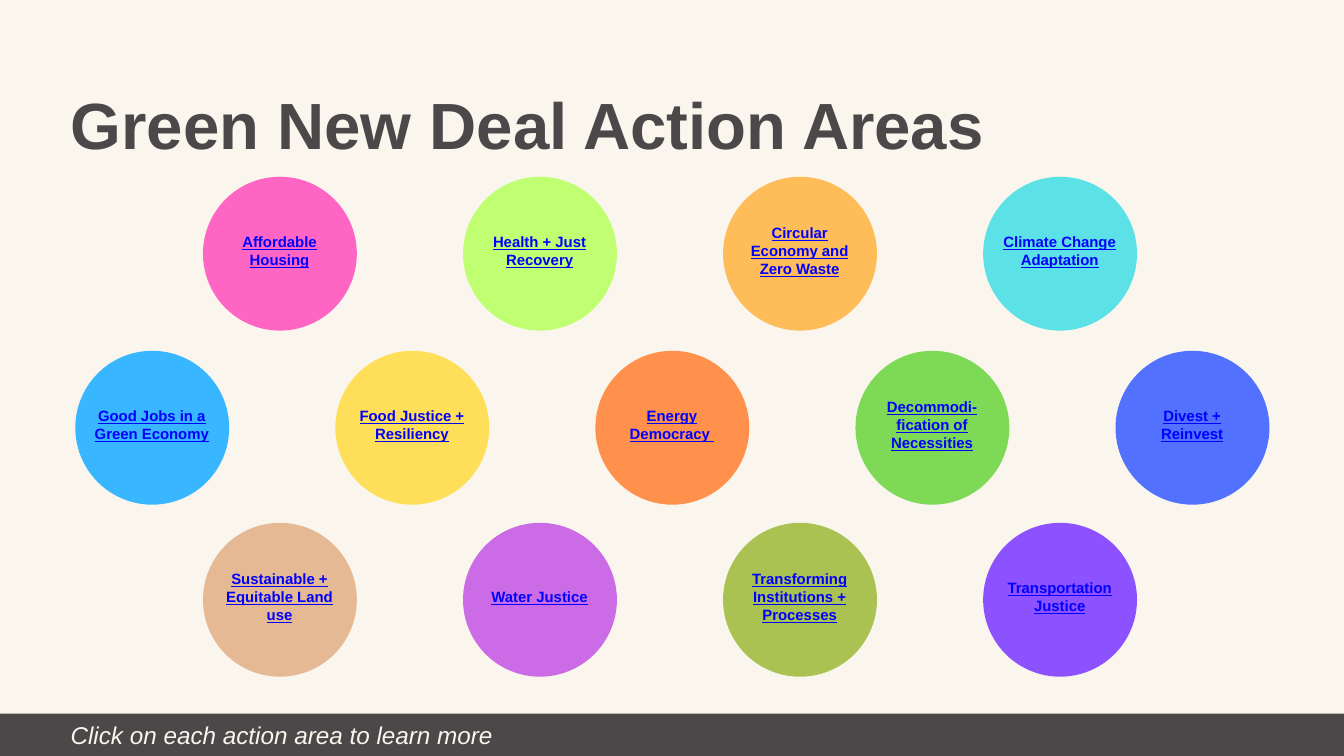
from pptx import Presentation
from pptx.dml.color import RGBColor
from pptx.enum.shapes import MSO_SHAPE as Shape
from pptx.enum.text import MSO_ANCHOR as Anchor, MSO_AUTO_SIZE as AutoSize, PP_ALIGN as Align
from pptx.util import Emu, Pt

PX = 9144
CREAM, CHARCOAL, LINK = "FAF6EE", "4A4849", "0000FF"
CIRCLE, STEP = 229, 387
ROWS = [
    (302, 263, [
        ("Affordable Housing", "FF66C4"),
        ("Health + Just Recovery", "C1FF72"),
        ("Circular Economy and Zero Waste", "FFBD59"),
        ("Climate Change Adaptation", "5CE1E6"),
    ]),
    (112, 522, [
        ("Good Jobs in a Green Economy", "38B6FF"),
        ("Food Justice + Resiliency", "FFDE59"),
        ("Energy Democracy ", "FF914D"),
        ("Decommodi-fication of Necessities", "7ED957"),
        ("Divest + Reinvest", "5271FF"),
    ]),
    (302, 778, [
        ("Sustainable + Equitable Land use", "E4B994"),
        ("Water Justice", "CB6CE6"),
        ("Transforming Institutions + Processes", "A9C252"),
        ("Transportation Justice", "8C52FF"),
    ]),
]


def px(*lengths):
    return [Emu(length * PX) for length in lengths]


def paint(fill, color):
    fill.solid()
    fill.fore_color.rgb = RGBColor.from_string(color)


def add_solid(shapes, kind, box, color):
    shape = shapes.add_shape(kind, *px(*box))
    shape.shadow.inherit = False
    paint(shape.fill, color)
    shape.line.fill.background()


def write(shape, text, size, color, align=Align.LEFT, anchor=Anchor.TOP, inset=0,
          bold=False, italic=False, underline=False):
    frame = shape.text_frame
    frame.word_wrap = True
    frame.auto_size = AutoSize.NONE
    frame.vertical_anchor = anchor
    margin = Emu(inset * PX)
    frame.margin_left = frame.margin_right = margin
    frame.margin_top = frame.margin_bottom = margin
    para = frame.paragraphs[0]
    para.alignment = align
    para.line_spacing = Pt(size * 1.21)
    span = para.add_run()
    span.text = text
    font = span.font
    font.name, font.size = "Arial", Pt(size)
    font.bold, font.italic, font.underline = bold, italic, underline
    font.color.rgb = RGBColor.from_string(color)


def add_title(page, box):
    title = page.shapes.title
    title.left, title.top, title.width, title.height = px(*box)
    write(title, "Green New Deal Action Areas", 70, CHARCOAL, bold=True)


def add_action_area(page, left, top, label, color):
    shapes = page.shapes.add_group_shape().shapes
    add_solid(shapes, Shape.OVAL, (left, top, CIRCLE, CIRCLE), color)
    caption = shapes.add_textbox(*px(left + 21, top + 13, 186, 194))
    write(caption, label, 16, LINK, Align.CENTER, Anchor.MIDDLE, 6,
          bold=True, underline=True)


def add_footer(page, left, top, width, height):
    add_solid(page.shapes, Shape.RECTANGLE, (left, top, width, height), CHARCOAL)
    hint = page.shapes.add_textbox(*px(left + 143, top + 10, 1168, 44))
    write(hint, "Click on each action area to learn more", 26, CREAM, italic=True)


def main():
    deck = Presentation()
    deck.slide_width, deck.slide_height = px(2000, 1125)
    page = deck.slides.add_slide(deck.slide_layouts[5])
    paint(page.background.fill, CREAM)
    add_title(page, (105, 124, 1782, 118))
    for left, top, areas in ROWS:
        for column, (label, color) in enumerate(areas):
            add_action_area(page, left + column * STEP, top, label, color)
    add_footer(page, -38, 1062, 2174, 63)
    deck.save("out.pptx")


if __name__ == "__main__":
    main()
